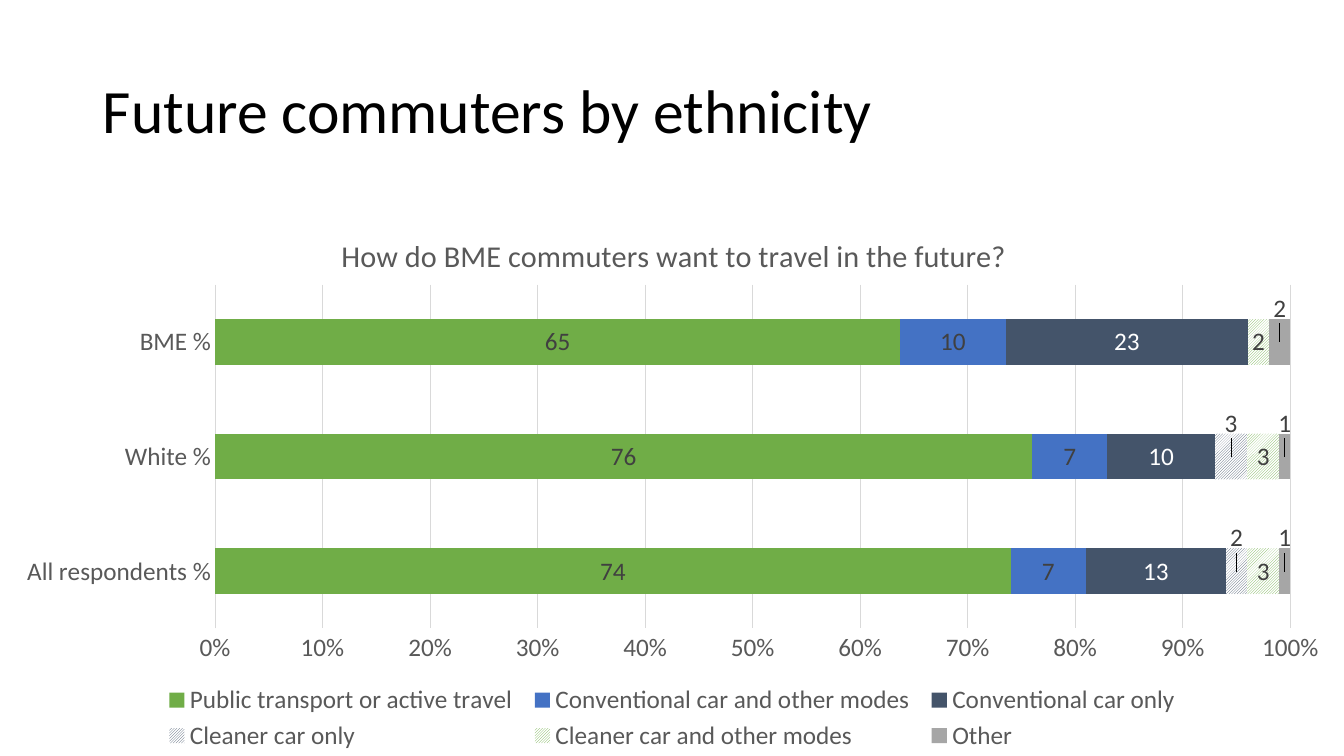
from pptx import Presentation
from pptx.chart.data import CategoryChartData
from pptx.dml.color import RGBColor
from pptx.enum.chart import XL_CHART_TYPE, XL_LABEL_POSITION, XL_LEGEND_POSITION, XL_TICK_MARK
from pptx.enum.dml import MSO_PATTERN
from pptx.enum.text import MSO_ANCHOR, PP_ALIGN
from pptx.oxml import parse_xml
from pptx.oxml.ns import nsdecls
from pptx.util import Inches, Pt

COLORS = {
    "black": "000000", "white": "FFFFFF", "text": "595959", "label": "404040",
    "grid": "D9D9D9", "green": "70AD47", "blue": "4472C4", "navy": "44546A",
    "gray": "A6A6A6",
}

# name, values, colour, hatched, label colour, points whose label sits above the bar
SERIES = [
    ("Public transport or active travel ", (74, 76, 65), "green", False, "label", ()),
    ("Conventional car and other modes ", (7, 7, 10), "blue", False, "label", ()),
    ("Conventional car only", (13, 10, 23), "navy", False, "white", ()),
    ("Cleaner car only", (2, 3, 0), "navy", True, "label", (0, 1)),
    ("Cleaner car and other modes", (3, 3, 2), "green", True, "label", ()),
    ("Other", (1, 1, 2), "gray", False, "label", (0, 1, 2)),
]


def style_font(font, size, color):
    font.name = "Calibri"
    font.size = Pt(size)
    font.bold = False
    font.color.rgb = RGBColor.from_string(COLORS[color])


def set_layout(parent, index, **settings):
    """Give a chart part a manual layout, as fractions of the chart."""
    for old in parent.xpath("./c:layout"):
        parent.remove(old)
    tags = "".join(f'<c:{tag} val="{value}"/>' for tag, value in settings.items())
    parent.insert(index, parse_xml(
        f'<c:layout {nsdecls("c")}><c:manualLayout>{tags}</c:manualLayout></c:layout>'))


deck = Presentation()
deck.slide_width, deck.slide_height = Inches(13.33), Inches(7.5)
page = deck.slides.add_slide(deck.slide_layouts[5])

title = page.shapes.title
title.left, title.top = Inches(0.92), Inches(0.4)
title.width, title.height = Inches(11.5), Inches(1.45)
title.text_frame.text = "Future commuters by ethnicity"
title.text_frame.vertical_anchor = MSO_ANCHOR.MIDDLE
para = title.text_frame.paragraphs[0]
para.alignment = PP_ALIGN.LEFT
para.line_spacing = 0.9
style_font(para.runs[0].font, 44, "black")

data = CategoryChartData()
data.categories = ["All respondents %", "White %", "BME %"]
for name, values, *_ in SERIES:
    data.add_series(name, values)
chart = page.shapes.add_chart(
    XL_CHART_TYPE.BAR_STACKED_100, Inches(0), Inches(2), Inches(13.33), Inches(5.5), data).chart
style_font(chart.font, 18, "black")

chart.has_title = True
chart_title = chart.chart_title.text_frame
chart_title.text = "How do BME commuters want to travel in the future?"
style_font(chart_title.paragraphs[0].runs[0].font, 21.6, "text")

chart.has_legend = True
chart.legend.position = XL_LEGEND_POSITION.BOTTOM
chart.legend.include_in_layout = False
style_font(chart.legend.font, 18, "text")

for axis in (chart.category_axis, chart.value_axis):
    axis.major_tick_mark = axis.minor_tick_mark = XL_TICK_MARK.NONE
    style_font(axis.tick_labels.font, 18, "text")
chart.value_axis.maximum_scale = 1
chart.value_axis.major_unit = 0.1
chart.value_axis.tick_labels.number_format = "0%"
chart.value_axis.tick_labels.number_format_is_linked = False
chart.value_axis.format.line.fill.background()
chart.value_axis.has_major_gridlines = True
for line in (chart.category_axis.format.line, chart.value_axis.major_gridlines.format.line):
    line.color.rgb = RGBColor.from_string(COLORS["grid"])
    line.width = Pt(0.75)

plot = chart.plots[0]
plot.gap_width = 150
plot.overlap = 100
plot.vary_by_categories = False
for series, (_, values, color, hatched, label_color, raised) in zip(plot.series, SERIES):
    fill = series.format.fill
    if hatched:
        fill.patterned()
        fill.pattern = MSO_PATTERN.DARK_UPWARD_DIAGONAL
        fill.fore_color.rgb = RGBColor.from_string(COLORS[color])
        fill.back_color.rgb = RGBColor.from_string(COLORS["white"])
    else:
        fill.solid()
        fill.fore_color.rgb = RGBColor.from_string(COLORS[color])
    labels = series.data_labels
    labels.show_value = True
    labels.position = XL_LABEL_POSITION.CENTER
    style_font(labels.font, 18, label_color)
    for index, value in enumerate(values):
        if index in raised or value == 0:
            label = series.points[index].data_label
            label.position = XL_LABEL_POSITION.CENTER
            style_font(label.font, 18, label_color)

for label in chart.element.xpath(".//c:dLbl"):
    set_layout(label, 1, x=0, y=-0.06)

# The zero segment carries no label
for label in chart.element.xpath('.//c:ser[c:idx/@val="3"]//c:dLbl[c:idx/@val="2"]'):
    for child in list(label)[1:]:
        label.remove(child)
    label.append(parse_xml(f'<c:delete {nsdecls("c")} val="1"/>'))

set_layout(chart.element.xpath("./c:chart/c:title")[0], 1,
           xMode="edge", yMode="edge", x=0.25, y=0.05)
set_layout(chart.element.xpath("./c:chart/c:plotArea")[0], 0, layoutTarget="inner",
           xMode="edge", yMode="edge", x=0.16, y=0.15, w=0.8, h=0.62)

deck.save("out.pptx")
